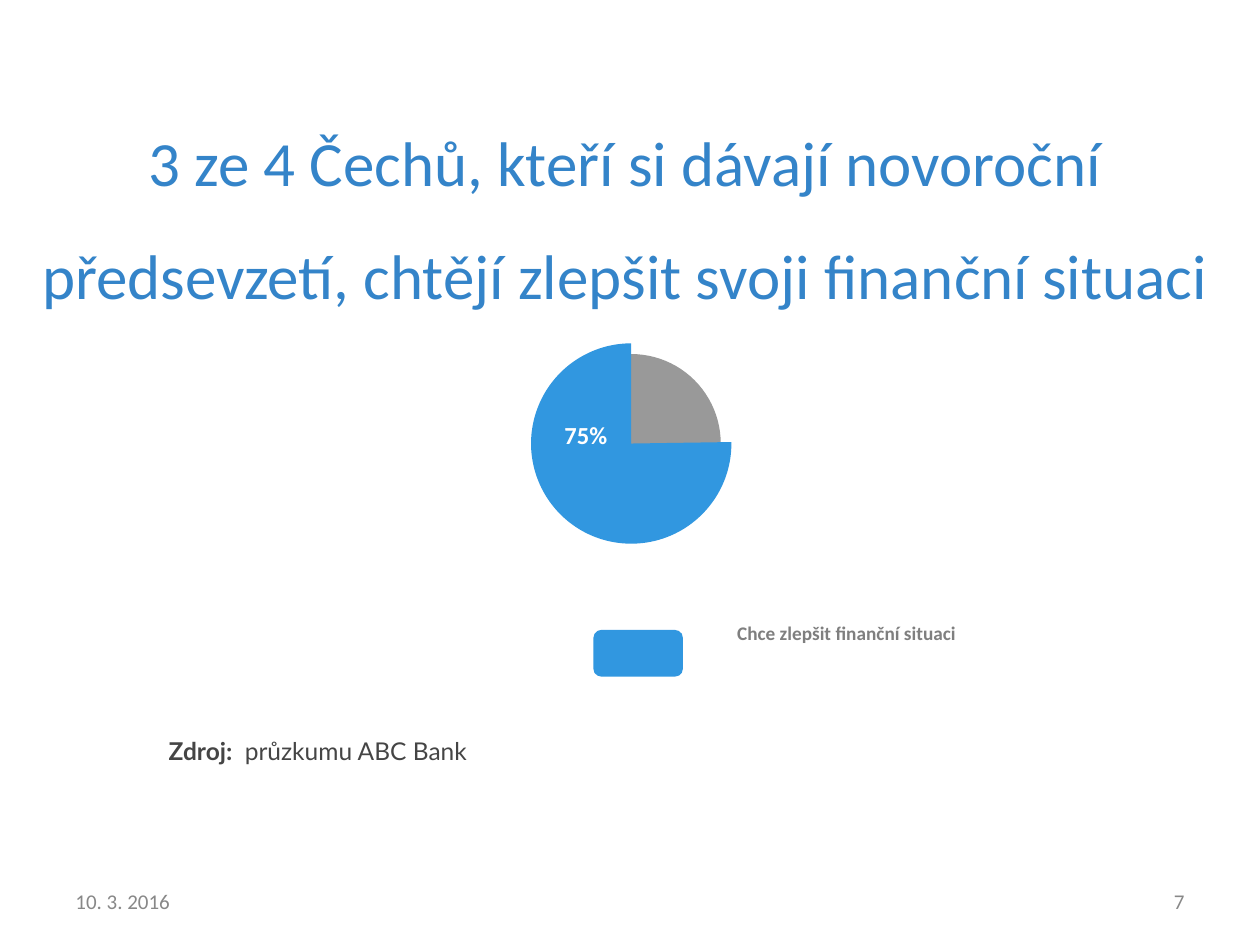
import pptx
import pptx.util
import pptx.dml.color
import pptx.enum.shapes
import pptx.enum.text

Inches = pptx.util.Inches
RGBColor = pptx.dml.color.RGBColor
SHAPE = pptx.enum.shapes.MSO_SHAPE
ALIGN = pptx.enum.text.PP_ALIGN
ANCHOR = pptx.enum.text.MSO_ANCHOR

# Content
TITLE = ("3 ze 4 Čechů, kteří si dávají novoroční předsevzetí, "
         "chtějí zlepšit svoji finanční situaci")
SHARE_LABEL = "75%"
LEGEND = "Chce zlepšit finanční situaci"
SOURCE = [("Zdroj: ", True), (" průzkumu ABC Bank", False)]
DATE, NUMBER = "10. 3. 2016", "7"

# Colours
BLUE = RGBColor(0x31, 0x97, 0xE0)
TITLE_BLUE = RGBColor(0x34, 0x84, 0xC9)
GREY = RGBColor(0x99, 0x99, 0x99)
LEGEND_GREY = RGBColor(0x7F, 0x7F, 0x7F)
FOOTER_GREY = RGBColor(0x88, 0x88, 0x88)
DARK = RGBColor(0x45, 0x45, 0x45)
WHITE = RGBColor(0xFF, 0xFF, 0xFF)

# Layout in inches
WIDTH, HEIGHT = 10, 7.5
MARGIN = WIDTH * 0.05
FOOTER_TOP, FOOTER_WIDTH, FOOTER_HEIGHT = 6.95, WIDTH * 0.7 / 3, 0.4
PIE_CENTRE = (5.01, 3.52)
DISC_SIZE, PIE_SIZE = 1.42, 1.59
PIE_START, PIE_END = 359.16, 270  # degrees, clockwise from the right
ANGLE_UNIT = 0.6                  # adjustment value per degree


def place(shape, left, top, width, height):
    shape.left, shape.top = Inches(left), Inches(top)
    shape.width, shape.height = Inches(width), Inches(height)


def write_text(shape, text, size, color, font="Calibri", bold=False,
               align=ALIGN.LEFT, anchor=ANCHOR.TOP, spacing=None,
               inset=True, wrap=True):
    """Fill a shape with one paragraph; text is a string or (text, bold) runs."""
    frame = shape.text_frame
    frame.word_wrap = wrap
    frame.auto_size = pptx.enum.text.MSO_AUTO_SIZE.NONE
    frame.vertical_anchor = anchor
    frame.margin_left = frame.margin_right = Inches(0.1 if inset else 0)
    frame.margin_top = frame.margin_bottom = Inches(0.05 if inset else 0)
    paragraph = frame.paragraphs[0]
    paragraph.alignment = align
    if spacing:
        paragraph.line_spacing = spacing
    for words, is_bold in [(text, bold)] if isinstance(text, str) else text:
        run = paragraph.add_run()
        run.text = words
        run.font.name = font
        run.font.size = pptx.util.Pt(size)
        run.font.bold = is_bold
        run.font.color.rgb = color


def add_text(slide, box, text, size, color, **text_format):
    shape = slide.shapes.add_textbox(*map(Inches, box))
    write_text(shape, text, size, color, **text_format)


def add_filled(slide, kind, box, color):
    shape = slide.shapes.add_shape(kind, *map(Inches, box))
    shape.shadow.inherit = False
    shape.fill.solid()
    shape.fill.fore_color.rgb = color
    shape.line.fill.background()
    return shape


def centred_square(size):
    return [centre - size / 2 for centre in PIE_CENTRE] + [size, size]


def main():
    presentation = pptx.Presentation()
    presentation.slide_width = Inches(WIDTH)
    presentation.slide_height = Inches(HEIGHT)
    slide = presentation.slides.add_slide(presentation.slide_layouts[5])

    # Title
    title = slide.shapes.title
    place(title, 0.04, 0.63, 9.84, 1.98)
    write_text(title, TITLE, 36, TITLE_BLUE, align=ALIGN.CENTER, spacing=1.5)

    # Grey disc with the larger three-quarter pie in front
    add_filled(slide, SHAPE.OVAL, centred_square(DISC_SIZE), GREY)
    pie = add_filled(slide, SHAPE.PIE, centred_square(PIE_SIZE), BLUE)
    pie.adjustments[0] = PIE_START * ANGLE_UNIT
    pie.adjustments[1] = PIE_END * ANGLE_UNIT
    add_text(slide, (4.48, 3.33, 0.34, 0.24), SHARE_LABEL, 14, WHITE,
             bold=True, align=ALIGN.CENTER, inset=False, wrap=False)

    # Legend
    add_filled(slide, SHAPE.ROUNDED_RECTANGLE, (4.71, 5, 0.71, 0.37), BLUE)
    add_text(slide, (5.85, 4.93, 2.43, 0.55), LEGEND, 11, LEGEND_GREY,
             bold=True, inset=False)

    # Source
    add_text(slide, (1.24, 5.79, 7.45, 0.34), SOURCE, 14, DARK, font="Lato")

    # Footer: date on the left, slide number on the right
    for left, text, align in [
            (MARGIN, DATE, ALIGN.LEFT),
            (WIDTH - MARGIN - FOOTER_WIDTH, NUMBER, ALIGN.RIGHT)]:
        add_text(slide, (left, FOOTER_TOP, FOOTER_WIDTH, FOOTER_HEIGHT), text,
                 12, FOOTER_GREY, align=align, anchor=ANCHOR.MIDDLE)

    presentation.save("out.pptx")


if __name__ == "__main__":
    main()
